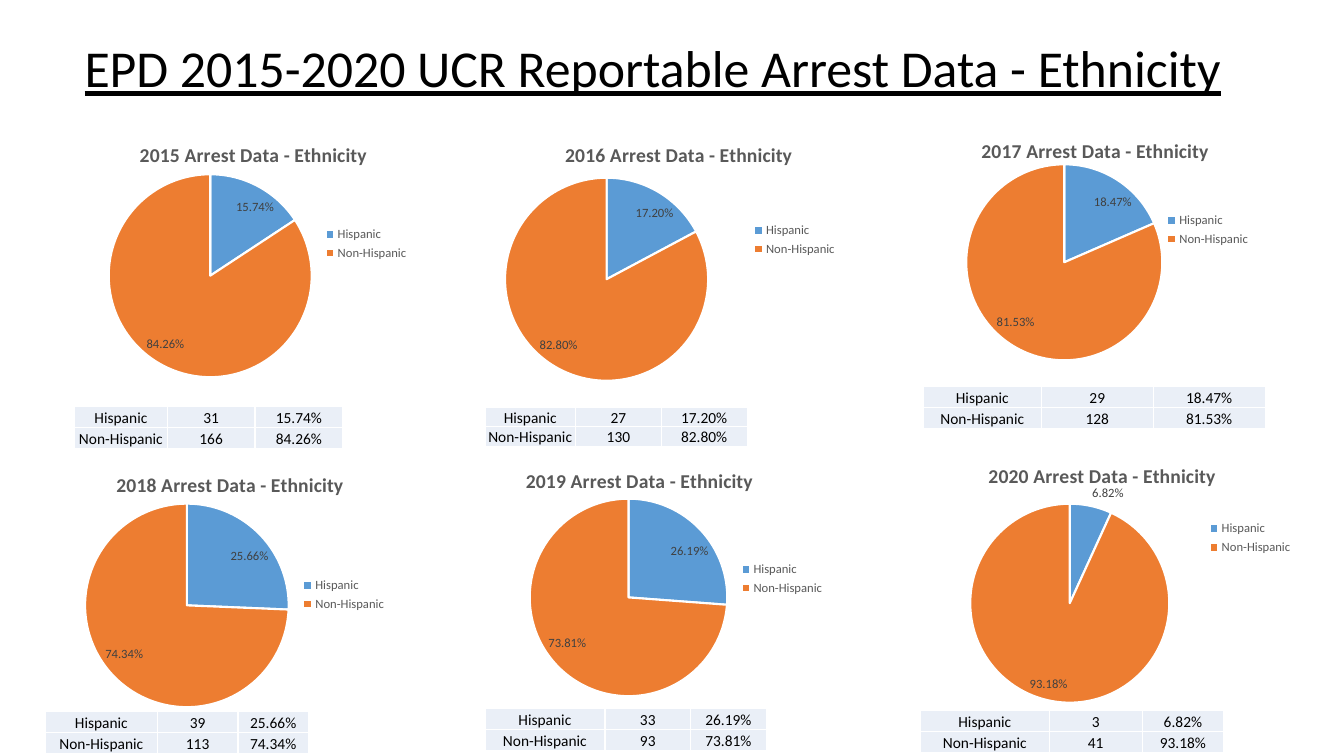
from pptx import Presentation
from pptx.chart.data import CategoryChartData
from pptx.dml.color import RGBColor
from pptx.enum.chart import XL_CHART_TYPE, XL_LABEL_POSITION, XL_LEGEND_POSITION
from pptx.enum.text import MSO_ANCHOR, PP_ALIGN
from pptx.oxml import parse_xml
from pptx.oxml.ns import nsdecls
from pptx.util import Inches, Pt

COLORS = {
    "text": "000000", "muted": "595959", "label": "404040", "white": "FFFFFF",
    "hispanic": "5B9BD5", "non_hispanic": "ED7D31", "cell": "EAEFF7",
}
FORMATS = {
    "heading": {"size": Pt(37), "underline": True},
    "base": {"size": Pt(10)},
    "chart_title": {"size": Pt(14), "bold": True},
    "small": {"size": Pt(9)},
    "cell": {"size": Pt(11)},
}
GROUPS = {"Hispanic": "hispanic", "Non-Hispanic": "non_hispanic"}

YEARS = {
    2015: {"counts": (31, 166), "chart": (-9, 16, 55.13, 40), "plot": (31, 17.6, 27.4, 67.2),
           "title": (34.7, 5.6), "legend": (59.8, 33.8),
           "table": (5.55, 53.73), "columns": (6.9, 6.53, 6.53), "row": 2.8},
    2016: {"counts": (27, 130), "chart": (31.43, 15.87, 37.5, 40.27), "plot": (16.4, 18.9, 40.3, 66.9),
           "title": (27.6, 5.9), "legend": (65.1, 32.6),
           "table": (36.08, 53.87), "columns": (6.75, 6.38, 6.38), "row": 2.6},
    2017: {"counts": (29, 128), "chart": (62.48, 15.6, 37.5, 40), "plot": (25.1, 15.3, 38.9, 64.9),
           "title": (27.4, 5.3), "legend": (64.3, 30.1),
           "table": (68.7, 51.07), "columns": (8.78, 8.33, 8.33), "row": 2.8},
    2018: {"counts": (39, 113), "chart": (-1.43, 56.53, 37.5, 41.33), "plot": (20.7, 24.4, 40.4, 65.2),
           "title": (26.2, 12.8), "legend": (63.3, 47),
           "table": (3.38, 94.13), "columns": (8.33, 6, 5.25), "row": 2.8},
    2019: {"counts": (33, 93), "chart": (28.58, 59.07, 37.5, 41.33), "plot": (28.9, 16.6, 39.2, 63.4),
           "title": (27.4, 5.6), "legend": (70.2, 35.7),
           "table": (36.08, 93.73), "columns": (8.93, 6.38, 5.63), "row": 2.8},
    2020: {"counts": (3, 41), "chart": (64.13, 56, 37.5, 41.33), "plot": (21.5, 25.7, 39.5, 63.8),
           "title": (24.4, 11.2), "legend": (68.3, 30.1),
           "table": (68.48, 94), "columns": (9.6, 6.9, 6.08), "row": 2.8},
}


class ArrestPage:
    """Draws styled elements on one slide, with lengths in percent of its size."""

    def __init__(self, deck, font_name):
        self.deck = deck
        self.font_name = font_name
        self.page = deck.slides.add_slide(deck.slide_layouts[6])

    def across(self, share):
        return round(self.deck.slide_width * share / 100)

    def down(self, share):
        return round(self.deck.slide_height * share / 100)

    def frame(self, left, top, width, height):
        return self.across(left), self.down(top), self.across(width), self.down(height)

    def style(self, font, format_name, color):
        for name, value in FORMATS[format_name].items():
            setattr(font, name, value)
        font.name = self.font_name
        font.color.rgb = RGBColor.from_string(COLORS[color])

    def heading(self, text, place):
        box = self.page.shapes.add_textbox(*self.frame(*place)).text_frame
        box.word_wrap = True
        box.margin_right = 0
        box.vertical_anchor = MSO_ANCHOR.MIDDLE
        para = box.paragraphs[0]
        para.line_spacing = 0.9
        span = para.add_run()
        span.text = text
        self.style(span.font, "heading", "text")

    def arrange(self, parent, index, place, inner=False):
        for old_layout in parent.xpath("c:layout"):
            parent.remove(old_layout)
        target = '<c:layoutTarget val="inner"/>' if inner else ""
        modes = "".join(f'<c:{axis}Mode val="edge"/>' for axis in "xy")
        sizes = "".join(f'<c:{axis} val="{share / 100:.3f}"/>' for axis, share in zip("xywh", place))
        parent.insert(index, parse_xml(
            f'<c:layout {nsdecls("c")}><c:manualLayout>{target}{modes}{sizes}</c:manualLayout></c:layout>'))

    def pie(self, year, facts):
        data = CategoryChartData(number_format="0.00%")
        data.categories = list(GROUPS)
        data.add_series("Series 1", [round(count / sum(facts["counts"]), 4) for count in facts["counts"]])
        chart = self.page.shapes.add_chart(XL_CHART_TYPE.PIE, *self.frame(*facts["chart"]), data).chart
        self.style(chart.font, "base", "text")

        chart.has_title = True
        span = chart.chart_title.text_frame.paragraphs[0].add_run()
        span.text = f"{year} Arrest Data - Ethnicity"
        self.style(span.font, "chart_title", "muted")

        chart.has_legend = True
        chart.legend.position = XL_LEGEND_POSITION.RIGHT
        chart.legend.include_in_layout = False
        self.style(chart.legend.font, "small", "muted")

        plot = chart.plots[0]
        plot.vary_by_categories = True
        for index, color in enumerate(GROUPS.values()):
            slice_format = plot.series[0].points[index].format
            slice_format.fill.solid()
            slice_format.fill.fore_color.rgb = RGBColor.from_string(COLORS[color])
            slice_format.line.color.rgb = RGBColor.from_string(COLORS["white"])
            slice_format.line.width = Pt(1.5)

        labels = plot.series[0].data_labels
        settings = {"show_value": True, "show_percentage": False, "number_format": "0.00%",
                    "number_format_is_linked": False, "position": XL_LABEL_POSITION.BEST_FIT}
        for name, value in settings.items():
            setattr(labels, name, value)
        self.style(labels.font, "small", "label")

        root = chart._chartSpace
        self.arrange(root.xpath("c:chart/c:title")[0], 1, facts["title"])
        self.arrange(root.xpath("c:chart/c:legend")[0], 1, facts["legend"])
        self.arrange(root.xpath("c:chart/c:plotArea")[0], 0, facts["plot"], inner=True)

    def table(self, facts):
        counts, columns, row_height = facts["counts"], facts["columns"], facts["row"]
        place = self.frame(*facts["table"], sum(columns), row_height * len(counts))
        table = self.page.shapes.add_table(len(counts), len(columns), *place).table
        table.first_row = table.horz_banding = False
        for column, width in zip(table.columns, columns):
            column.width = self.across(width)
        for row, group, count in zip(table.rows, GROUPS, counts):
            row.height = self.down(row_height)
            for cell, text in zip(row.cells, (group, str(count), f"{count / sum(counts):.2%}")):
                self.cell(cell, text)

    def cell(self, cell, text):
        settings = {"margin_left": Inches(0.01), "margin_right": Inches(0.01), "margin_top": Inches(0.01),
                    "margin_bottom": 0, "vertical_anchor": MSO_ANCHOR.BOTTOM}
        for name, value in settings.items():
            setattr(cell, name, value)
        cell.fill.solid()
        cell.fill.fore_color.rgb = RGBColor.from_string(COLORS["cell"])
        para = cell.text_frame.paragraphs[0]
        para.alignment = PP_ALIGN.CENTER
        span = para.add_run()
        span.text = text
        self.style(span.font, "cell", "text")
        properties = cell._tc.get_or_add_tcPr()
        for index, side in enumerate("LRTB"):
            properties.insert(index, parse_xml(
                f'<a:ln{side} {nsdecls("a")} w="{Pt(1)}"><a:solidFill>'
                f'<a:srgbClr val="{COLORS["white"]}"/></a:solidFill></a:ln{side}>'))


def main():
    deck = Presentation()
    deck.slide_width, deck.slide_height = Inches(13.33), Inches(7.5)
    page = ArrestPage(deck, "Calibri")
    page.heading("EPD 2015-2020 UCR Reportable Arrest Data - Ethnicity", (5.55, -0.27, 86.25, 19.33))
    for year, facts in YEARS.items():
        page.pie(year, facts)
    for facts in YEARS.values():
        page.table(facts)
    deck.save("out.pptx")


if __name__ == "__main__":
    main()
